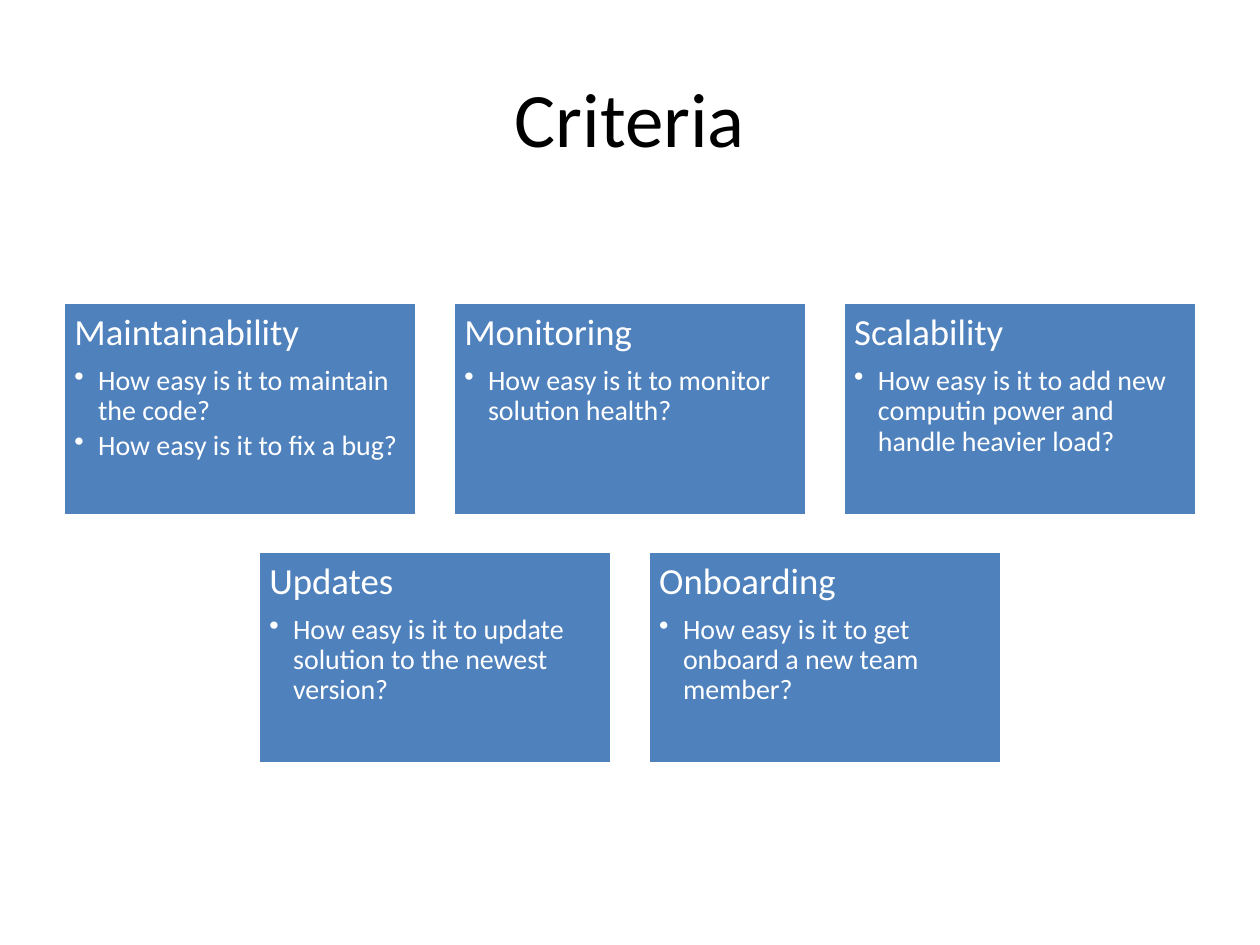
from lxml.etree import SubElement
from pptx import Presentation
from pptx.dml.color import RGBColor
from pptx.enum.shapes import MSO_SHAPE
from pptx.enum.text import MSO_ANCHOR, PP_ALIGN
from pptx.oxml.ns import qn
from pptx.util import Cm, Pt

TITLE = "Criteria"
ROWS = [
    [
        ("Maintainability", ["How easy is it to maintain the code?", "How easy is it to fix a bug?"]),
        ("Monitoring", ["How easy is it to monitor solution health?"]),
        ("Scalability", ["How easy is it to add new computin power and handle heavier load?"]),
    ],
    [
        ("Updates", ["How easy is it to update solution to the newest version?"]),
        ("Onboarding", ["How easy is it to get onboard a new team member?"]),
    ],
]

BLACK = RGBColor(0x00, 0x00, 0x00)
WHITE = RGBColor(0xFF, 0xFF, 0xFF)
BLUE = RGBColor(0x4F, 0x81, 0xBD)
FONT = "Calibri"

SLIDE_WIDTH, SLIDE_HEIGHT = Cm(25.4), Cm(19.05)
CARD_WIDTH, CARD_HEIGHT = Cm(7.14), Cm(4.29)
GAP = Cm(0.72)
FIRST_ROW_TOP = Cm(6.1)
INSET = Cm(0.23)
INDENT = Cm(0.48)


def style(paragraph, size, color):
    paragraph.font.name = FONT
    paragraph.font.size = Pt(size)
    paragraph.font.color.rgb = color


def add_bullet(paragraph):
    properties = paragraph._p.get_or_add_pPr()
    properties.set("marL", str(INDENT))
    properties.set("indent", str(-INDENT))
    SubElement(properties, qn("a:buChar")).set("char", "•")


def add_title(page):
    box = page.shapes.add_textbox(Cm(1.27), Cm(0.76), Cm(22.86), Cm(3.18))
    frame = box.text_frame
    frame.word_wrap = True
    frame.vertical_anchor = MSO_ANCHOR.MIDDLE
    paragraph = frame.paragraphs[0]
    paragraph.text = TITLE
    paragraph.alignment = PP_ALIGN.CENTER
    style(paragraph, 44, BLACK)


def add_card(page, left, top, heading, questions):
    card = page.shapes.add_shape(MSO_SHAPE.RECTANGLE, left, top, CARD_WIDTH, CARD_HEIGHT)
    card.shadow.inherit = False
    card.fill.solid()
    card.fill.fore_color.rgb = BLUE
    card.line.color.rgb = WHITE
    card.line.width = Pt(2)
    frame = card.text_frame
    frame.word_wrap = True
    frame.vertical_anchor = MSO_ANCHOR.TOP
    frame.margin_left = frame.margin_right = INSET
    frame.margin_top = frame.margin_bottom = INSET
    for index, text in enumerate([heading, *questions]):
        paragraph = frame.add_paragraph() if index else frame.paragraphs[0]
        paragraph.text = text
        paragraph.alignment = PP_ALIGN.LEFT
        paragraph.line_spacing = 0.9
        paragraph.space_after = Pt(2.4 if index else 7.35)
        style(paragraph, 16 if index else 21, WHITE)
        if index:
            paragraph.level = 1
            add_bullet(paragraph)


def main():
    deck = Presentation()
    deck.slide_width, deck.slide_height = SLIDE_WIDTH, SLIDE_HEIGHT
    page = deck.slides.add_slide(deck.slide_layouts[6])
    add_title(page)
    for row, cards in enumerate(ROWS):
        row_width = len(cards) * (CARD_WIDTH + GAP) - GAP
        row_left = (SLIDE_WIDTH - row_width) // 2
        top = FIRST_ROW_TOP + row * (CARD_HEIGHT + GAP)
        for column, (heading, questions) in enumerate(cards):
            add_card(page, row_left + column * (CARD_WIDTH + GAP), top, heading, questions)
    deck.save("out.pptx")


if __name__ == "__main__":
    main()
